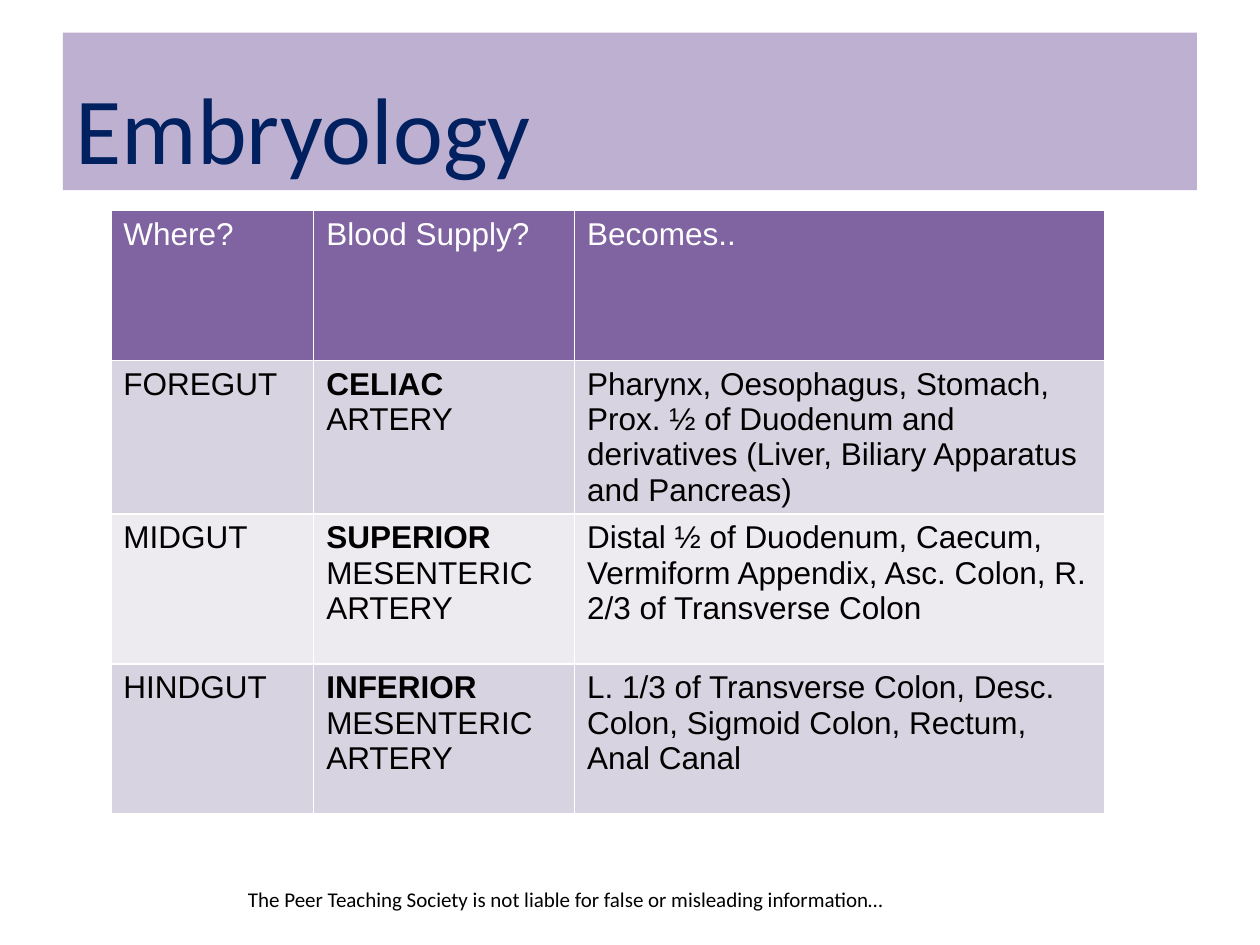
"""Build the Embryology slide with its gut, blood supply and derivatives table."""
from lxml import etree
from pptx import Presentation, util as u
from pptx.dml.color import RGBColor
from pptx.enum import shapes, text
from pptx.oxml import ns

WHITE = RGBColor(0xFF, 0xFF, 0xFF)
BLACK = RGBColor(0x00, 0x00, 0x00)
NAVY = RGBColor(0x00, 0x20, 0x60)
BANNER = RGBColor(0xA7, 0x93, 0xBF)
HEADER = RGBColor(0x80, 0x64, 0xA2)
BANDS = (RGBColor(0xD8, 0xD3, 0xE0), RGBColor(0xED, 0xEA, 0xF0))

COLUMN_WIDTHS = (1.61, 2.07, 4.21)
ROW_HEIGHT = 1.19
ROWS = (
    (["Where?"], ["Blood Supply?"], ["Becomes.."]),
    (["FOREGUT"], ["CELIAC ", "ARTERY"],
     ["Pharynx, Oesophagus, Stomach, Prox. ½ of Duodenum and derivatives "
      "(Liver, Biliary Apparatus and Pancreas)"]),
    (["MIDGUT"], ["SUPERIOR ", "MESENTERIC ARTERY"],
     ["Distal ½ of Duodenum, Caecum, Vermiform Appendix, Asc. Colon, "
      "R. 2/3 of Transverse Colon"]),
    (["HINDGUT"], ["INFERIOR ", "MESENTERIC ARTERY"],
     ["L. 1/3 of Transverse Colon, Desc. Colon, Sigmoid Colon, Rectum, Anal Canal"]),
)


class SlideBuilder:
    """Hold the style and the current slide."""

    heading_font = "Calibri"
    table_font = "Arial"

    def __init__(self, slide):
        self.slide = slide

    def add_run(self, paragraph, wording, font, size, color, bold=False):
        run = paragraph.add_run()
        run.text = wording
        run.font.name = font
        run.font.size = u.Pt(size)
        run.font.color.rgb = color
        run.font.bold = bold

    def banner(self, left, top, width, height, color, opacity):
        shape = self.slide.shapes.add_shape(
            shapes.MSO_SHAPE.RECTANGLE,
            u.Inches(left), u.Inches(top), u.Inches(width), u.Inches(height))
        shape.shadow.inherit = False
        shape.line.fill.background()
        shape.fill.solid()
        shape.fill.fore_color.rgb = color
        color_element = shape.element.spPr.find(".//" + ns.qn("a:srgbClr"))
        etree.SubElement(color_element, ns.qn("a:alpha"), val=str(opacity * 1000))
        return shape

    def title(self, wording, left, top, width, height, behind):
        title = self.slide.shapes.title
        title.left, title.top = u.Inches(left), u.Inches(top)
        title.width, title.height = u.Inches(width), u.Inches(height)
        behind.element.addnext(title.element)
        frame = title.text_frame
        frame.word_wrap = True
        frame.auto_size = text.MSO_AUTO_SIZE.NONE
        frame.vertical_anchor = text.MSO_ANCHOR.BOTTOM
        paragraph = frame.paragraphs[0]
        paragraph.alignment = text.PP_ALIGN.LEFT
        self.add_run(paragraph, wording, self.heading_font, 54, NAVY)

    def note(self, wording, left, top, width, height):
        box = self.slide.shapes.add_textbox(
            u.Inches(left), u.Inches(top), u.Inches(width), u.Inches(height))
        box.text_frame.word_wrap = True
        self.add_run(box.text_frame.paragraphs[0], wording, self.heading_font, 12, BLACK)

    def border(self, cell, color, width):
        properties = cell._tc.get_or_add_tcPr()
        for index, side in enumerate(("lnL", "lnR", "lnT", "lnB")):
            line = etree.Element(ns.qn("a:" + side), w=str(u.Pt(width)))
            fill = etree.SubElement(line, ns.qn("a:solidFill"))
            etree.SubElement(fill, ns.qn("a:srgbClr"), val=str(color))
            properties.insert(index, line)

    def table(self, rows, left, top, column_widths, row_height):
        table = self.slide.shapes.add_table(
            len(rows), len(column_widths), u.Inches(left), u.Inches(top),
            u.Inches(sum(column_widths)), u.Inches(row_height * len(rows))).table
        for column, width in zip(table.columns, column_widths):
            column.width = u.Inches(width)
        for row_index, row in enumerate(rows):
            table.rows[row_index].height = u.Inches(row_height)
            is_header = row_index == 0
            for column_index, pieces in enumerate(row):
                cell = table.cell(row_index, column_index)
                cell.fill.solid()
                cell.fill.fore_color.rgb = HEADER if is_header else BANDS[(row_index - 1) % 2]
                self.border(cell, WHITE, 1)
                for position, piece in enumerate(pieces):
                    self.add_run(cell.text_frame.paragraphs[0], piece, self.table_font, 18,
                                 WHITE if is_header else BLACK,
                                 bold=position < len(pieces) - 1)


def main():
    presentation = Presentation()
    presentation.slide_width = u.Inches(10)
    presentation.slide_height = u.Inches(7.5)
    builder = SlideBuilder(presentation.slides.add_slide(presentation.slide_layouts[5]))
    builder.note("The Peer Teaching Society is not liable for false or misleading information…",
                 1.87, 6.99, 5.54, 0.3)
    banner = builder.banner(0.5, 0.26, 9, 1.25, BANNER, 73)
    builder.title("Embryology", 0.5, 0.5, 9, 1.01, behind=banner)
    builder.table(ROWS, 0.88, 1.67, COLUMN_WIDTHS, ROW_HEIGHT)
    presentation.save("out.pptx")


if __name__ == "__main__":
    main()
